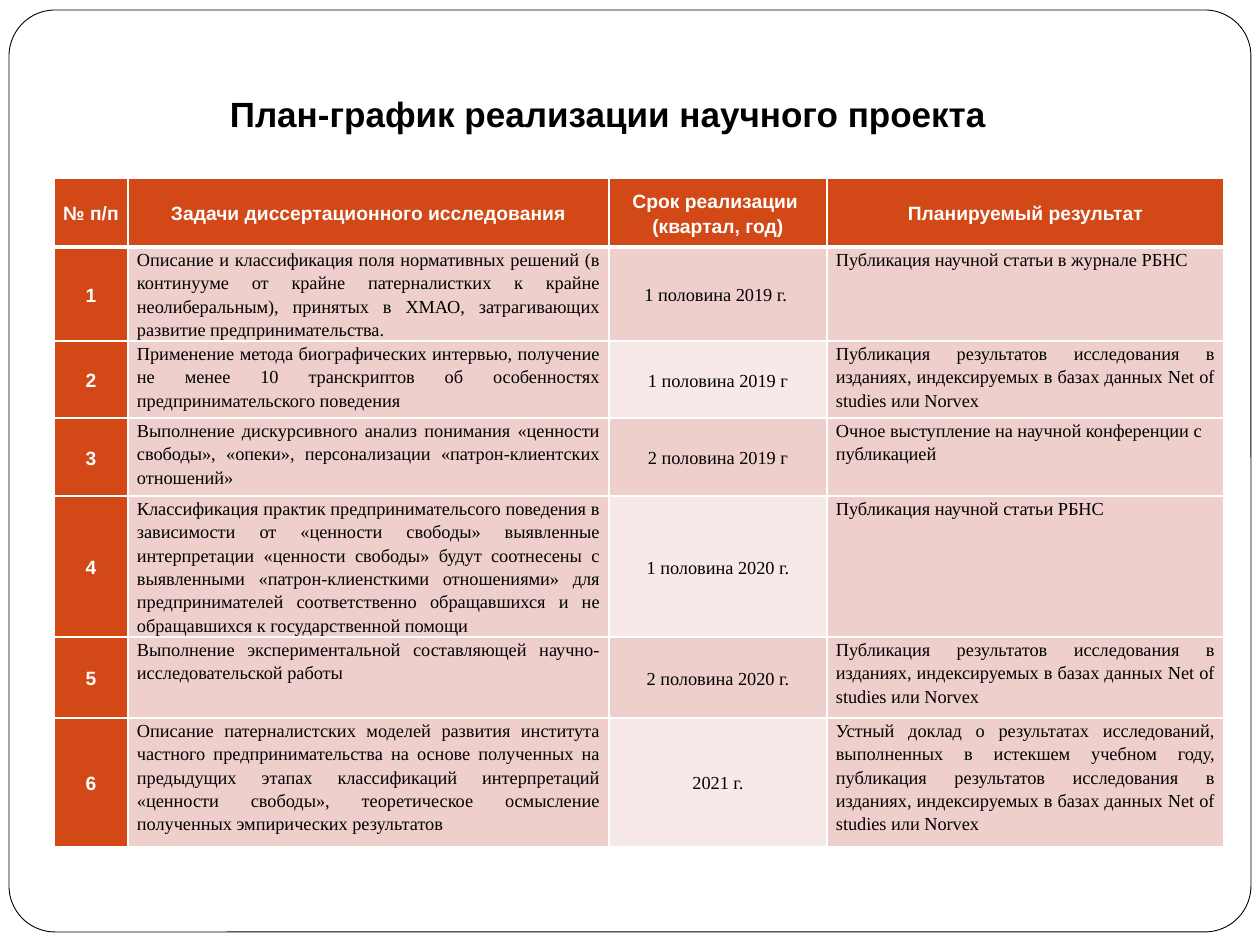
from lxml import etree
from pptx import Presentation
from pptx.dml.color import RGBColor
from pptx.enum.shapes import MSO_SHAPE
from pptx.enum.text import MSO_ANCHOR, MSO_AUTO_SIZE, PP_ALIGN
from pptx.oxml.ns import qn
from pptx.util import Emu, Pt

ROUNDED = MSO_SHAPE.ROUNDED_RECTANGLE
TOP, MIDDLE = MSO_ANCHOR.TOP, MSO_ANCHOR.MIDDLE
LEFT, CENTER, JUSTIFY = PP_ALIGN.LEFT, PP_ALIGN.CENTER, PP_ALIGN.JUSTIFY
FIT_SHAPE = MSO_AUTO_SIZE.SHAPE_TO_FIT_TEXT

WHITE = RGBColor(0xFF, 0xFF, 0xFF)
BLACK = RGBColor(0, 0, 0)
ORANGE = RGBColor(0xD3, 0x48, 0x17)
PINK = RGBColor(0xEF, 0xCF, 0xCC)
PALE_PINK = RGBColor(0xF7, 0xE9, 0xE8)
SCALE = 914400 / 126


def px(*lengths):
    return [Emu(round(length * SCALE)) for length in lengths]


def style_text(paragraph, face, size, color, bold, align):
    paragraph.alignment = align
    paragraph.font.name = face
    paragraph.font.size = Pt(size)
    paragraph.font.bold = bold
    paragraph.font.color.rgb = color


INDEXED = ("Публикация результатов исследования в изданиях, индексируемых "
           "в базах данных Net of studies или Norvex")
PLAN = [
    ("№ п/п", "Задачи диссертационного исследования",
     "Срок реализации \v(квартал, год)", "Планируемый результат"),
    ("1", "Описание и классификация поля нормативных решений (в континууме от "
     "крайне патерналистких к крайне неолиберальным), принятых в ХМАО, "
     "затрагивающих развитие предпринимательства.",
     "1 половина 2019 г. ", "Публикация научной статьи в журнале РБНС"),
    ("2", "Применение метода биографических интервью, получение не менее 10 "
     "транскриптов об особенностях предпринимательского поведения",
     "1 половина 2019 г", INDEXED),
    ("3", "Выполнение дискурсивного анализ понимания «ценности свободы», "
     "«опеки», персонализации «патрон-клиентских отношений»",
     "2 половина 2019 г",
     "Очное выступление на научной конференции с публикацией"),
    ("4", "Классификация практик предпринимательсого поведения в зависимости "
     "от «ценности свободы» выявленные интерпретации «ценности свободы» будут "
     "соотнесены с выявленными «патрон-клиенсткими отношениями» для "
     "предпринимателей соответственно обращавшихся и не обращавшихся к "
     "государственной помощи",
     "1 половина 2020 г.", "Публикация научной статьи РБНС"),
    ("5", "Выполнение экспериментальной составляющей "
     "научно-исследовательской работы", "2 половина 2020 г.", INDEXED),
    ("6", "Описание патерналистских моделей развития института частного "
     "предпринимательства на основе полученных на предыдущих этапах "
     "классификаций интерпретаций «ценности свободы», теоретическое осмысление "
     "полученных эмпирических результатов", "2021 г.",
     "Устный доклад о результатах исследований, выполненных в истекшем учебном "
     "году, публикация результатов исследования в изданиях, индексируемых в "
     "базах данных Net of studies или Norvex"),
]
COLUMN_WIDTHS = [74, 481, 218, 397]
ROW_HEIGHTS = [69, 94, 77, 78, 141, 81, 129]

prs = Presentation()
prs.slide_width, prs.slide_height = px(1260, 945)
slide = prs.slides.add_slide(prs.slide_layouts[6])

page_frame = slide.shapes.add_shape(ROUNDED, *px(9, 10, 1242, 922))
page_frame.shadow.inherit = False
page_frame.adjustments[0] = 0.05
page_frame.fill.solid()
page_frame.fill.fore_color.rgb = WHITE
page_frame.line.color.rgb = BLACK
page_frame.line.width = Pt(0.5)

schedule = slide.shapes.add_table(
    len(PLAN), len(COLUMN_WIDTHS),
    *px(54, 178, sum(COLUMN_WIDTHS), sum(ROW_HEIGHTS))).table
schedule.first_col = True
for column, width in zip(schedule.columns, px(*COLUMN_WIDTHS)):
    column.width = width
for row, height in zip(schedule.rows, px(*ROW_HEIGHTS)):
    row.height = height

for r, entries in enumerate(PLAN):
    for c, entry in enumerate(entries):
        cell = schedule.cell(r, c)
        is_heading = r == 0 or c == 0
        cell.margin_left, cell.margin_right = px(9, 9)
        cell.margin_top = cell.margin_bottom = 0
        cell.vertical_anchor = MIDDLE if is_heading or c == 2 else TOP

        for side in ("lnL", "lnR", "lnT", "lnB"):
            under_header = (r, side) in ((0, "lnB"), (1, "lnT"))
            border = etree.SubElement(cell._tc.get_or_add_tcPr(), qn("a:" + side),
                                      w=str(Pt(3 if under_header else 1)))
            paint = etree.SubElement(border, qn("a:solidFill"))
            etree.SubElement(paint, qn("a:srgbClr"), val=str(WHITE))

        cell.fill.solid()
        if is_heading:
            cell.fill.fore_color.rgb = ORANGE
        else:
            cell.fill.fore_color.rgb = PALE_PINK if c == 2 and r % 2 == 0 else PINK

        paragraph = cell.text_frame.paragraphs[0]
        paragraph.text = entry
        paragraph.line_spacing = 1.15
        if is_heading:
            style_text(paragraph, "Arial", 11, WHITE, True, CENTER)
        else:
            align = CENTER if c == 2 else LEFT if (r, c) == (3, 3) else JUSTIFY
            style_text(paragraph, "Times New Roman", 10.5, BLACK, False, align)

title = slide.shapes.add_textbox(*px(174, 86, 868, 55)).text_frame
title.word_wrap = True
title.auto_size = FIT_SHAPE
title.paragraphs[0].text = "План-график реализации научного проекта"
style_text(title.paragraphs[0], "Arial", 20, BLACK, True, CENTER)

prs.save("out.pptx")
